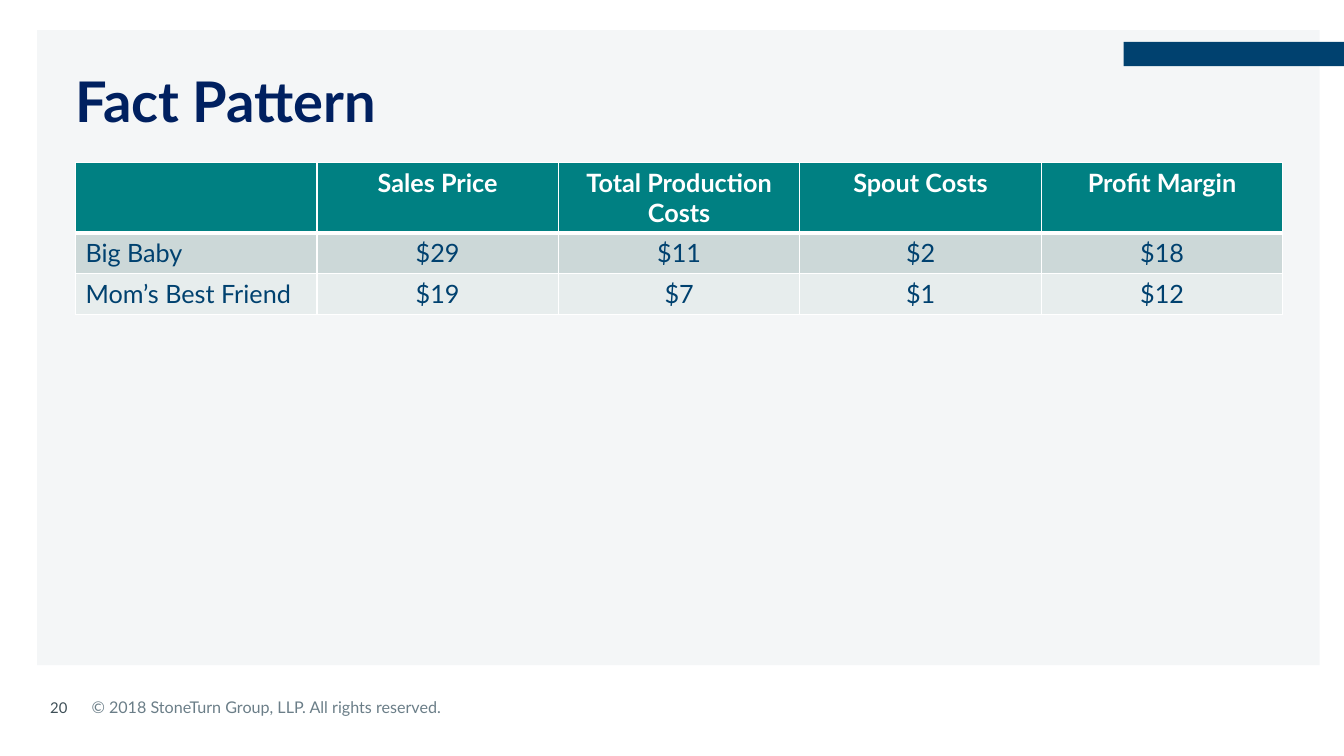
from lxml import etree
from pptx import Presentation
from pptx.dml.color import RGBColor
from pptx.enum.shapes import MSO_SHAPE
from pptx.enum.text import MSO_ANCHOR, PP_ALIGN
from pptx.oxml.ns import qn
from pptx.util import Pt

RECTANGLE = MSO_SHAPE.RECTANGLE
TOP, MIDDLE = MSO_ANCHOR.TOP, MSO_ANCHOR.MIDDLE
LEFT, CENTER = PP_ALIGN.LEFT, PP_ALIGN.CENTER

WHITE = RGBColor(0xFF, 0xFF, 0xFF)
MIST = RGBColor(0xD5, 0xDD, 0xE1)
BLUE = RGBColor(0x00, 0x41, 0x6F)
NAVY = RGBColor(0x00, 0x20, 0x60)
TEAL = RGBColor(0x00, 0x80, 0x82)
BAND_DARK = RGBColor(0xCC, 0xD8, 0xD8)
BAND_LIGHT = RGBColor(0xE7, 0xED, 0xED)
SLATE = RGBColor(0x6B, 0x7E, 0x88)
CHARCOAL = RGBColor(0x3E, 0x4F, 0x57)

PRICES = [
    ["", "Sales Price", "Total Production Costs", "Spout Costs", "Profit Margin"],
    ["Big Baby", "$29", "$11", "$2", "$18"],
    ["Mom’s Best Friend", "$19", "$7", "$1", "$12"],
]


class PageBuilder:
    """Draws styled elements on one page."""

    def __init__(self, page, typeface):
        self.page = page
        self.typeface = typeface

    def add_span(self, para, text, size, color, bold=False, align=LEFT):
        para.alignment = align
        span = para.add_run()
        span.text = text
        formats = {"name": self.typeface, "size": Pt(size), "bold": bold}
        for name, value in formats.items():
            setattr(span.font, name, value)
        span.font.color.rgb = color

    def add_text(self, text, frame, size, color, bold=False, anchor=TOP, insets=(7.2, 3.6)):
        box = self.page.shapes.add_textbox(*map(Pt, frame)).text_frame
        side, end = map(Pt, insets)
        formats = {
            "word_wrap": True,
            "vertical_anchor": anchor,
            "margin_left": side,
            "margin_right": side,
            "margin_top": end,
            "margin_bottom": end,
        }
        for name, value in formats.items():
            setattr(box, name, value)
        self.add_span(box.paragraphs[0], text, size, color, bold)

    def add_block(self, frame, color, opacity=100):
        block = self.page.shapes.add_shape(RECTANGLE, *map(Pt, frame))
        block.shadow.inherit = False
        block.line.fill.background()
        block.fill.solid()
        block.fill.fore_color.rgb = color
        if opacity < 100:
            tint = block._element.spPr.find(".//" + qn("a:srgbClr"))
            etree.SubElement(tint, qn("a:alpha"), val=str(opacity * 1000))

    def add_borders(self, cell, widths):
        properties = cell._tc.get_or_add_tcPr()
        for index, (side, width) in enumerate(widths.items()):
            line = etree.Element(qn("a:ln" + side), w=str(Pt(width)))
            fill = etree.SubElement(line, qn("a:solidFill"))
            etree.SubElement(fill, qn("a:srgbClr"), val=str(WHITE))
            properties.insert(index, line)

    def add_table(self, rows, frame, heights, fills, size):
        shape = self.page.shapes.add_table(len(rows), len(rows[0]), *map(Pt, frame))
        grid = shape.table
        for column in grid.columns:
            column.width = Pt(frame[2] / len(rows[0]))
        for r, values in enumerate(rows):
            grid.rows[r].height = Pt(heights[r])
            header = r == 0
            widths = {"L": 1, "R": 1, "T": 3 if r == 1 else 1, "B": 3 if header else 1}
            for c, value in enumerate(values):
                cell = grid.cell(r, c)
                cell.fill.solid()
                cell.fill.fore_color.rgb = fills[r]
                self.add_borders(cell, widths)
                if value:
                    self.add_span(cell.text_frame.paragraphs[0], value, size,
                                  WHITE if header else BLUE, header, CENTER if c else LEFT)


def main():
    deck = Presentation()
    deck.slide_width, deck.slide_height = Pt(960), Pt(540)
    page = deck.slides.add_slide(deck.slide_layouts[6])
    builder = PageBuilder(page, "Lato")
    builder.add_text("© 2018 StoneTurn Group, LLP. All rights reserved.",
                     (58.3, 494.6, 435, 21), 11.5, SLATE)
    builder.add_text("20", (28.8, 495.4, 190.8, 20), 10.6, CHARCOAL)
    builder.add_block((26.6, 21.6, 916, 453.6), MIST, opacity=24)
    builder.add_block((802.6, 30, 157.4, 17.2), BLUE)
    builder.add_text("Fact Pattern", (53.9, 39.6, 863, 63.4), 40, NAVY, True, MIDDLE, (0, 4.3))
    builder.add_table(PRICES, (53.9, 115.9, 862.5, 108.8), (50.4, 29.2, 29.2),
                      (TEAL, BAND_DARK, BAND_LIGHT), 18)
    deck.save("out.pptx")


if __name__ == "__main__":
    main()
